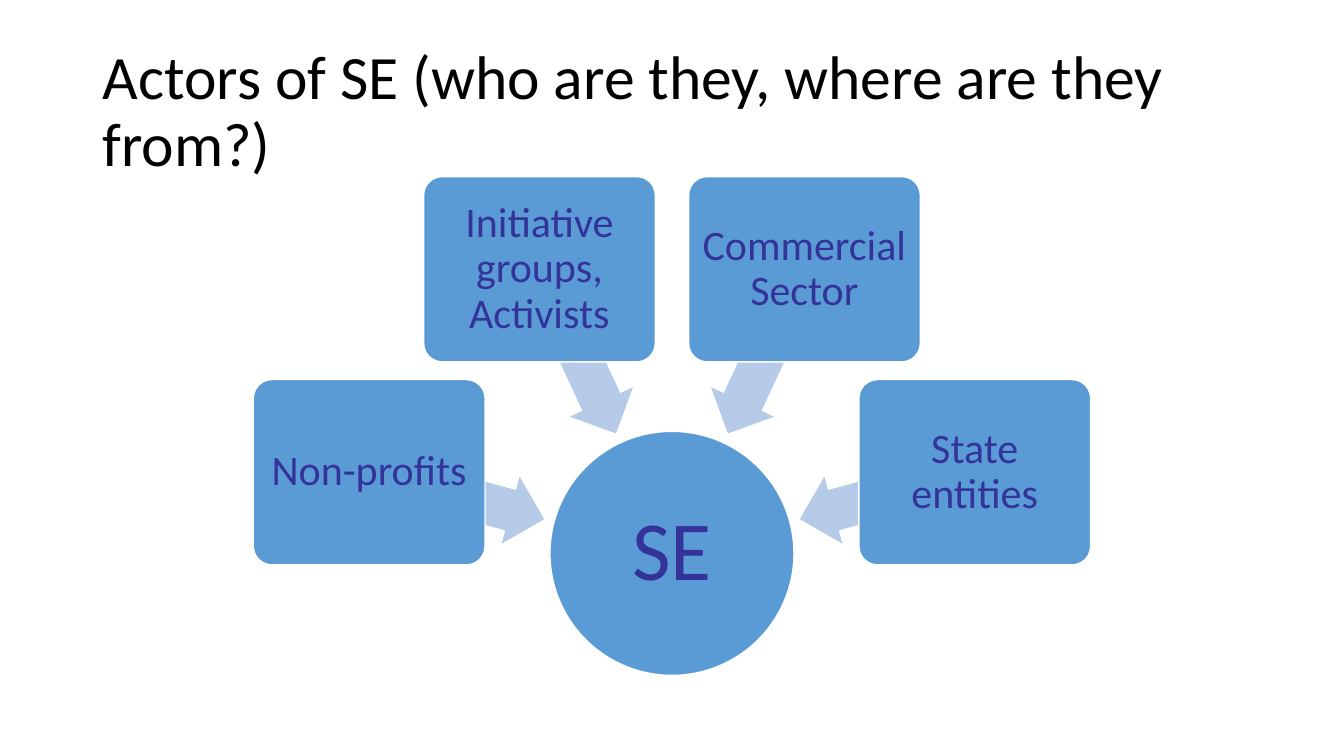
import math

import pptx
import pptx.dml.color
import pptx.enum.shapes
import pptx.enum.text
import pptx.util

Cm = pptx.util.Cm
MSO_SHAPE = pptx.enum.shapes.MSO_SHAPE
RGBColor = pptx.dml.color.RGBColor

BLACK = RGBColor(0x00, 0x00, 0x00)
WHITE = RGBColor(0xFF, 0xFF, 0xFF)
BLUE = RGBColor(0x5B, 0x9B, 0xD5)
PALE_BLUE = RGBColor(0xB5, 0xCB, 0xE7)
INDIGO = RGBColor(0x33, 0x33, 0x99)

ACTORS = {
    195: "Non-profits",
    245: "Initiative groups, Activists",
    295: "Commercial Sector",
    345: "State entities",
}


def write_text(frame, text, size, color, align):
    """Fill a text frame with one middle-anchored paragraph."""
    frame.text = text
    frame.word_wrap = True
    frame.auto_size = pptx.enum.text.MSO_AUTO_SIZE.NONE
    frame.vertical_anchor = pptx.enum.text.MSO_ANCHOR.MIDDLE
    paragraph = frame.paragraphs[0]
    paragraph.alignment = align
    paragraph.line_spacing = 0.9
    font = paragraph.runs[0].font
    font.name = "Calibri"
    font.size = pptx.util.Pt(size)
    font.color.rgb = color


def place_heading(slide, left, top, width, height):
    """Place the slide title in the given box."""
    heading = slide.shapes.title
    heading.left, heading.top = left, top
    heading.width, heading.height = width, height
    write_text(heading.text_frame, "Actors of SE (who are they, where are they from?)",
               44, BLACK, pptx.enum.text.PP_ALIGN.LEFT)


def add_centred(slide, kind, center, size, fill):
    """Add a flat preset shape around a centre point."""
    (x, y), (width, height) = center, size
    part = slide.shapes.add_shape(kind, int(x - width / 2), int(y - height / 2), width, height)
    part.shadow.inherit = False
    part.fill.solid()
    part.fill.fore_color.rgb = fill
    part.line.fill.background()
    return part


def add_node(slide, kind, center, size, text, text_size):
    """Add a white-outlined blue node with its label."""
    node = add_centred(slide, kind, center, size, BLUE)
    node.line.color.rgb = WHITE
    node.line.width = pptx.util.Pt(1)
    frame = node.text_frame
    frame.margin_left = frame.margin_right = frame.margin_top = frame.margin_bottom = 0
    write_text(frame, text, text_size, INDIGO, pptx.enum.text.PP_ALIGN.CENTER)
    return node


def polar(center, radius, degrees):
    """Return the point at a radius and clockwise angle from the centre."""
    angle = math.radians(degrees)
    return center[0] + radius * math.cos(angle), center[1] + radius * math.sin(angle)


def place_actors(slide, left, top, width, height):
    """Draw the hub at the foot of the box and the actors pointing to it."""
    hub_size = Cm(6.15)
    hub_center = (left + width / 2, top + height - hub_size / 2)
    add_node(slide, MSO_SHAPE.OVAL, hub_center, (hub_size, hub_size), "SE", 60)
    for degrees, actor in ACTORS.items():
        arrow = add_centred(slide, MSO_SHAPE.LEFT_ARROW, polar(hub_center, Cm(5.62), degrees),
                            (Cm(4.57), Cm(1.75)), PALE_BLUE)
        arrow.rotation = degrees
        arrow.adjustments[0] = 0.6
        arrow.adjustments[1] = 0.5
        box = add_node(slide, MSO_SHAPE.ROUNDED_RECTANGLE, polar(hub_center, Cm(7.9), degrees),
                       (Cm(5.84), Cm(4.67)), actor, 30)
        box.adjustments[0] = 0.1


def main():
    """Build and save the slide."""
    deck = pptx.Presentation()
    deck.slide_width, deck.slide_height = Cm(33.87), Cm(19.05)
    slide = deck.slides.add_slide(deck.slide_layouts.get_by_name("Title Only"))
    place_heading(slide, Cm(2.33), Cm(1.01), Cm(29.21), Cm(3.68))
    place_actors(slide, Cm(6.38), Cm(4.45), Cm(21.11), Cm(12.57))
    deck.save("out.pptx")


if __name__ == "__main__":
    main()
